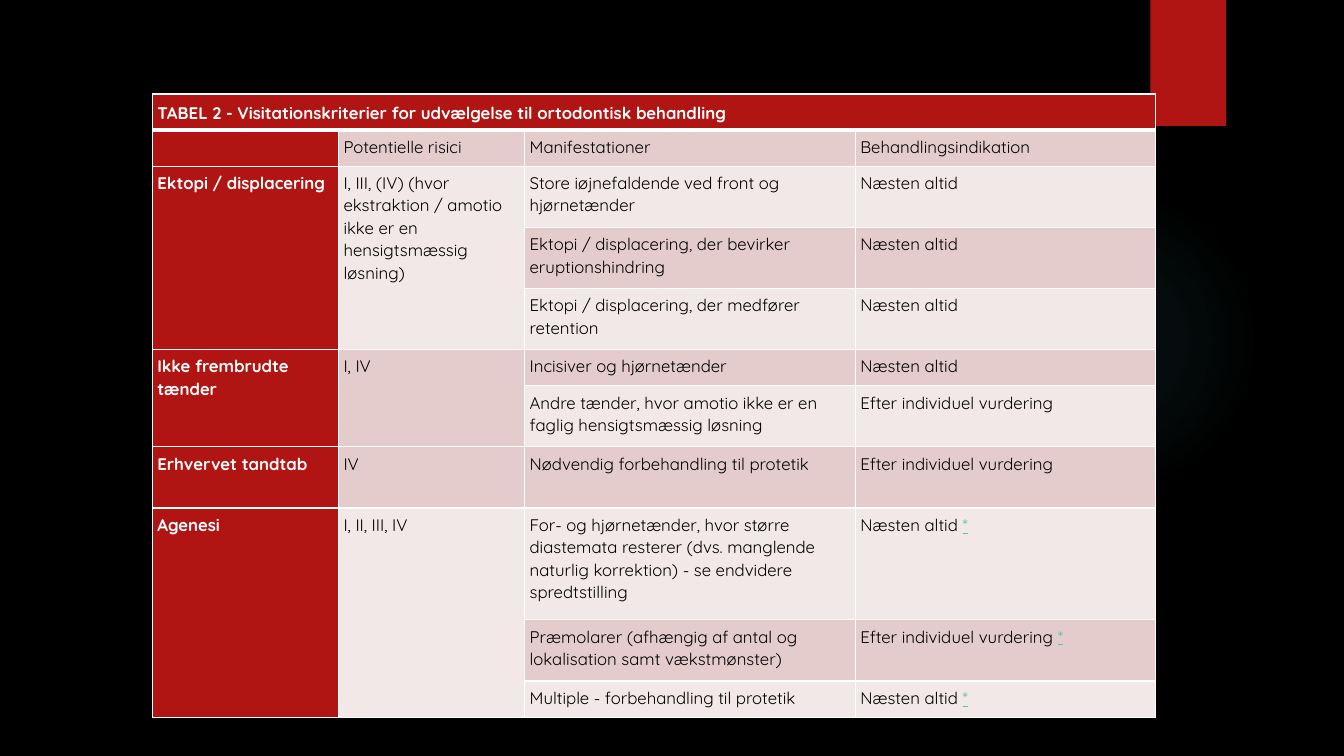
import pptx
import pptx.dml.color
import pptx.enum.shapes
import pptx.enum.text
import pptx.oxml
import pptx.oxml.ns
import pptx.util

Pt = pptx.util.Pt
SHAPE = pptx.enum.shapes.MSO_SHAPE
ANCHOR = pptx.enum.text.MSO_ANCHOR

TITLE = "TABEL 2 - Visitationskriterier for udvælgelse til ortodontisk behandling"
HEADINGS = ("", "Potentielle risici", "Manifestationer", "Behandlingsindikation")
GROUPS = [
    ("Ektopi / displacering",
     "I, III, (IV) (hvor ekstraktion / amotio ikke er en hensigtsmæssig løsning)",
     [("Store iøjnefaldende ved front og hjørnetænder", "Næsten altid"),
      ("Ektopi / displacering, der bevirker eruptionshindring", "Næsten altid"),
      ("Ektopi / displacering, der medfører retention", "Næsten altid")]),
    ("Ikke frembrudte tænder", "I, IV",
     [("Incisiver og hjørnetænder", "Næsten altid"),
      ("Andre tænder, hvor amotio ikke er en faglig hensigtsmæssig løsning",
       "Efter individuel vurdering")]),
    ("Erhvervet tandtab", "IV",
     [("Nødvendig forbehandling til protetik", "Efter individuel vurdering")]),
    ("Agenesi", "I, II, III, IV",
     [("For- og hjørnetænder, hvor større diastemata resterer (dvs. manglende "
       "naturlig korrektion) - se endvidere spredtstilling", "Næsten altid *"),
      ("Præmolarer (afhængig af antal og lokalisation samt vækstmønster)",
       "Efter individuel vurdering *"),
      ("Multiple - forbehandling til protetik", "Næsten altid *")]),
]
COLORS = {"background": "000000", "red": "B01513", "dark_band": "E4CCCC",
          "light_band": "F2E8E7", "white": "FFFFFF", "text": "000000",
          "link": "58C1BA", "glow": "50B9C1"}
FONT = "Quicksand"
ONE_LINE, TWO_LINES, FOUR_LINES = 25.8, 43.7, 79.9
ROW_HEIGHTS = ([ONE_LINE] * 2 + [TWO_LINES] * 3 + [ONE_LINE] + [TWO_LINES] * 2
               + [FOUR_LINES, TWO_LINES, ONE_LINE])
COLUMN_WIDTHS = (133, 133, 236.2, 214.2)
TABLE_LEFT, TABLE_TOP = 108.8, 67.1
GLOW_STOPS = ((0, 7), (36, 6), (69, 0))
INSET = 3.6


def rgb(name):
    """Return the named colour."""
    return pptx.dml.color.RGBColor.from_string(COLORS[name])


def add_block(s, kind, left, top, width, height):
    """Add a red shape without outline or shadow."""
    sp = s.shapes.add_shape(kind, Pt(left), Pt(top), Pt(width), Pt(height))
    sp.shadow.inherit = False
    sp.line.fill.background()
    sp.fill.solid()
    sp.fill.fore_color.rgb = rgb("red")
    return sp


def add_glow(s):
    """Add the faint radial glow behind the table."""
    sp = add_block(s, SHAPE.OVAL, 677.5, 131.8, 221.8, 221.8)
    stops = "".join(
        f'<a:gs pos="{pos * 1000}"><a:srgbClr val="{COLORS["glow"]}">'
        f'<a:alpha val="{alpha * 1000}"/></a:srgbClr></a:gs>'
        for pos, alpha in GLOW_STOPS)
    grad = pptx.oxml.parse_xml(
        f'<a:gradFill {pptx.oxml.ns.nsdecls("a")}><a:gsLst>{stops}</a:gsLst>'
        '<a:path path="circle"><a:fillToRect l="50000" t="50000" r="50000" '
        'b="50000"/></a:path></a:gradFill>')
    solid = sp._element.spPr.find(pptx.oxml.ns.qn("a:solidFill"))
    solid.getparent().replace(solid, grad)


def set_borders(cell, top, bottom):
    """Draw white borders round a cell."""
    tcPr = cell._tc.get_or_add_tcPr()
    for side, width in (("L", 1), ("R", 1), ("T", top), ("B", bottom)):
        tcPr.append(pptx.oxml.parse_xml(
            f'<a:ln{side} {pptx.oxml.ns.nsdecls("a")} w="{Pt(width)}"><a:solidFill>'
            f'<a:srgbClr val="{COLORS["white"]}"/></a:solidFill></a:ln{side}>'))


def fill_cell(cell, text, row, column):
    """Write and style one table cell."""
    header = row == 0 or column == 0
    band = "dark_band" if row % 2 else "light_band"
    set_borders(cell, 3 if row == 1 else 1, 3 if row == 0 else 1)
    cell.fill.solid()
    cell.fill.fore_color.rgb = rgb("red" if header else band)
    cell.margin_left = cell.margin_right = Pt(INSET)
    cell.margin_top = cell.margin_bottom = Pt(INSET if text else 0)
    cell.vertical_anchor = ANCHOR.MIDDLE if row == 0 else ANCHOR.TOP
    p = cell.text_frame.paragraphs[0]
    p.line_spacing = 1.07
    p.font.name = FONT
    p.font.size = Pt(12)
    p.font.bold = header
    p.font.color.rgb = rgb("white" if header else "text")
    body, mark, _ = text.partition("*")
    if body:
        p.add_run().text = body
    if mark:
        r = p.add_run()
        r.text = mark
        r.font.underline = True
        r.font.color.rgb = rgb("link")


def add_criteria_table(s):
    """Add the table of referral criteria."""
    rows = [(TITLE, "", "", ""), HEADINGS]
    spans = []
    for label, risks, criteria in GROUPS:
        spans.append((len(rows), len(criteria)))
        for i, pair in enumerate(criteria):
            rows.append(((label, risks) if i == 0 else ("", "")) + pair)
    frame = s.shapes.add_table(
        len(rows), len(COLUMN_WIDTHS), Pt(TABLE_LEFT), Pt(TABLE_TOP),
        Pt(sum(COLUMN_WIDTHS)), Pt(sum(ROW_HEIGHTS)))
    table = frame.table
    for column, width in zip(table.columns, COLUMN_WIDTHS):
        column.width = Pt(width)
    for row, height in zip(table.rows, ROW_HEIGHTS):
        row.height = Pt(height)
    for i, texts in enumerate(rows):
        for j, text in enumerate(texts):
            fill_cell(table.cell(i, j), text, i, j)
    table.cell(0, 0).merge(table.cell(0, len(COLUMN_WIDTHS) - 1))
    for first, count in spans:
        if count > 1:
            for j in (0, 1):
                table.cell(first, j).merge(table.cell(first + count - 1, j))


def main():
    """Build and save the slide."""
    prs = pptx.Presentation()
    prs.slide_width, prs.slide_height = Pt(960), Pt(540)
    s = prs.slides.add_slide(prs.slide_layouts[6])
    s.background.fill.solid()
    s.background.fill.fore_color.rgb = rgb("background")
    add_glow(s)
    add_block(s, SHAPE.RECTANGLE, 821.8, 0, 54, 90)
    add_criteria_table(s)
    prs.save("out.pptx")


if __name__ == "__main__":
    main()
